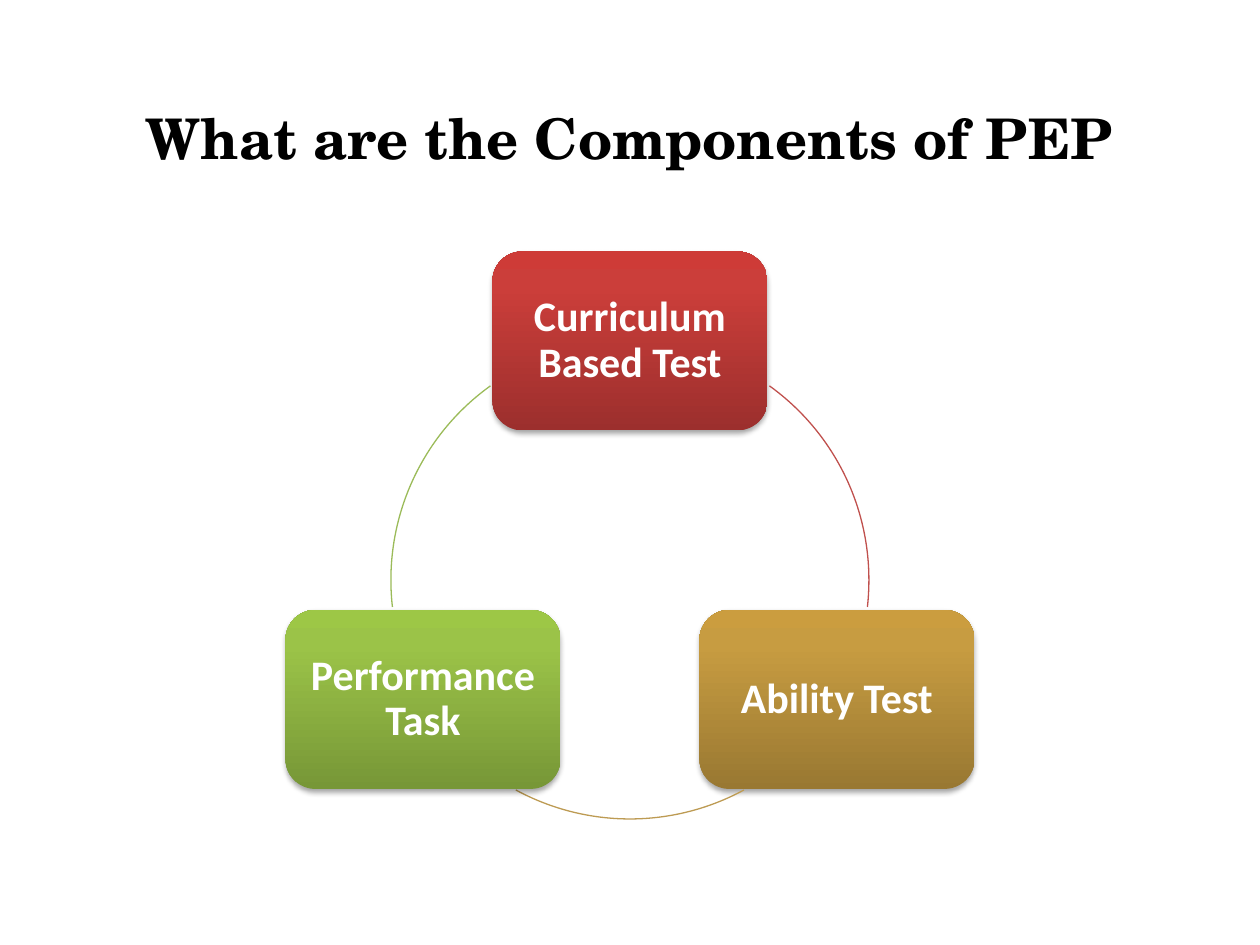
import copy
import math

from pptx import Presentation
from pptx import util as u
from pptx.dml.color import RGBColor
from pptx.enum import shapes, text
from pptx.oxml import parse_xml
from pptx.oxml.ns import nsdecls, qn

SCALE = 914400 / 126
BLACK = RGBColor(0x00, 0x00, 0x00)
WHITE = RGBColor(0xFF, 0xFF, 0xFF)
RED = RGBColor(0xC0, 0x50, 0x4D)
GOLD = RGBColor(0xBD, 0x9B, 0x53)
GREEN = RGBColor(0x9B, 0xBB, 0x59)
RED_SHADES = (RGBColor(0x9C, 0x2F, 0x2D), RGBColor(0xCB, 0x3E, 0x3A), RGBColor(0xCE, 0x3B, 0x37))
GOLD_SHADES = (RGBColor(0x99, 0x78, 0x32), RGBColor(0xC7, 0x9C, 0x41), RGBColor(0xCB, 0x9D, 0x3F))
GREEN_SHADES = (RGBColor(0x77, 0x97, 0x37), RGBColor(0x9B, 0xC3, 0x48), RGBColor(0x9D, 0xC7, 0x46))
SHADE_POSITIONS = (0, 0.8, 1)

TITLE_FONT = {"name": "TeX Gyre Schola", "size": u.Pt(32), "bold": True}
CARD_FONT = {"name": "Calibri", "size": u.Pt(24), "bold": True}
CARD_SIZE = (275, 179)
CARD_INSET = 13

COMPONENTS = [
    ("Curriculum Based Test", -90, RED_SHADES, RED, (305.7, 6.5)),
    ("Ability Test", 30, GOLD_SHADES, GOLD, (61.5, 118.5)),
    ("Performance Task", 150, GREEN_SHADES, GREEN, (173.5, 234.3)),
]


def px(length):
    return u.Emu(round(length * SCALE))


def write(frame, wording, font_format, color):
    frame.word_wrap = True
    frame.vertical_anchor = text.MSO_ANCHOR.MIDDLE
    paragraph = frame.paragraphs[0]
    paragraph.alignment = text.PP_ALIGN.CENTER
    paragraph.line_spacing = 0.9
    run = paragraph.add_run()
    run.text = wording
    for key, value in font_format.items():
        setattr(run.font, key, value)
    run.font.color.rgb = color


def shade(card, colors):
    card.fill.gradient()
    card.fill.gradient_angle = 90
    stop_list = card._element.spPr.find(qn("a:gradFill")).find(qn("a:gsLst"))
    stop_list.append(copy.deepcopy(stop_list[-1]))
    for stop, position, color in zip(card.fill.gradient_stops, SHADE_POSITIONS, colors):
        stop.position = position
        stop.color.rgb = color


def cast_shadow(card):
    card.shadow.inherit = False
    card._element.spPr.find(qn("a:effectLst")).append(parse_xml(
        f'<a:outerShdw {nsdecls("a")} blurRad="39370" dist="22860" dir="5400000" rotWithShape="0">'
        '<a:srgbClr val="000000"><a:alpha val="35000"/></a:srgbClr></a:outerShdw>'))


def add_title(slide, left, top, width, height):
    title = slide.shapes.add_textbox(px(left), px(top), px(width), px(height))
    write(title.text_frame, "What are the Components of PEP", TITLE_FONT, BLACK)


def add_card(slide, center_x, center_y, wording, shades):
    width, height = CARD_SIZE
    card = slide.shapes.add_shape(
        shapes.MSO_SHAPE.ROUNDED_RECTANGLE,
        px(center_x - width / 2), px(center_y - height / 2), px(width), px(height))
    shade(card, shades)
    card.line.fill.background()
    cast_shadow(card)
    for side in ("left", "top", "right", "bottom"):
        setattr(card.text_frame, f"margin_{side}", px(CARD_INSET))
    write(card.text_frame, wording, CARD_FONT, WHITE)


def add_arc(slide, left, top, diameter, color, angles):
    arc = slide.shapes.add_shape(
        shapes.MSO_SHAPE.ARC, px(left), px(top), px(diameter), px(diameter))
    for index, angle in enumerate(angles):
        arc.adjustments[index] = angle * 0.6
    arc.fill.background()
    arc.line.color.rgb = color
    arc.line.width = u.Pt(0.75)
    arc.shadow.inherit = False


def add_cycle(slide, left, top, diameter):
    radius = diameter / 2
    for wording, bearing, shades, arc_color, angles in COMPONENTS:
        turn = math.radians(bearing)
        add_card(slide, left + radius * (1 + math.cos(turn)),
                 top + radius * (1 + math.sin(turn)), wording, shades)
        add_arc(slide, left, top, diameter, arc_color, angles)


def main():
    deck = Presentation()
    deck.slide_width, deck.slide_height = px(1260), px(945)
    slide = deck.slides.add_slide(deck.slide_layouts[6])
    add_title(slide, 87, 50, 1086, 183)
    add_cycle(slide, 391, 341, 478)
    deck.save("out.pptx")


if __name__ == "__main__":
    main()
